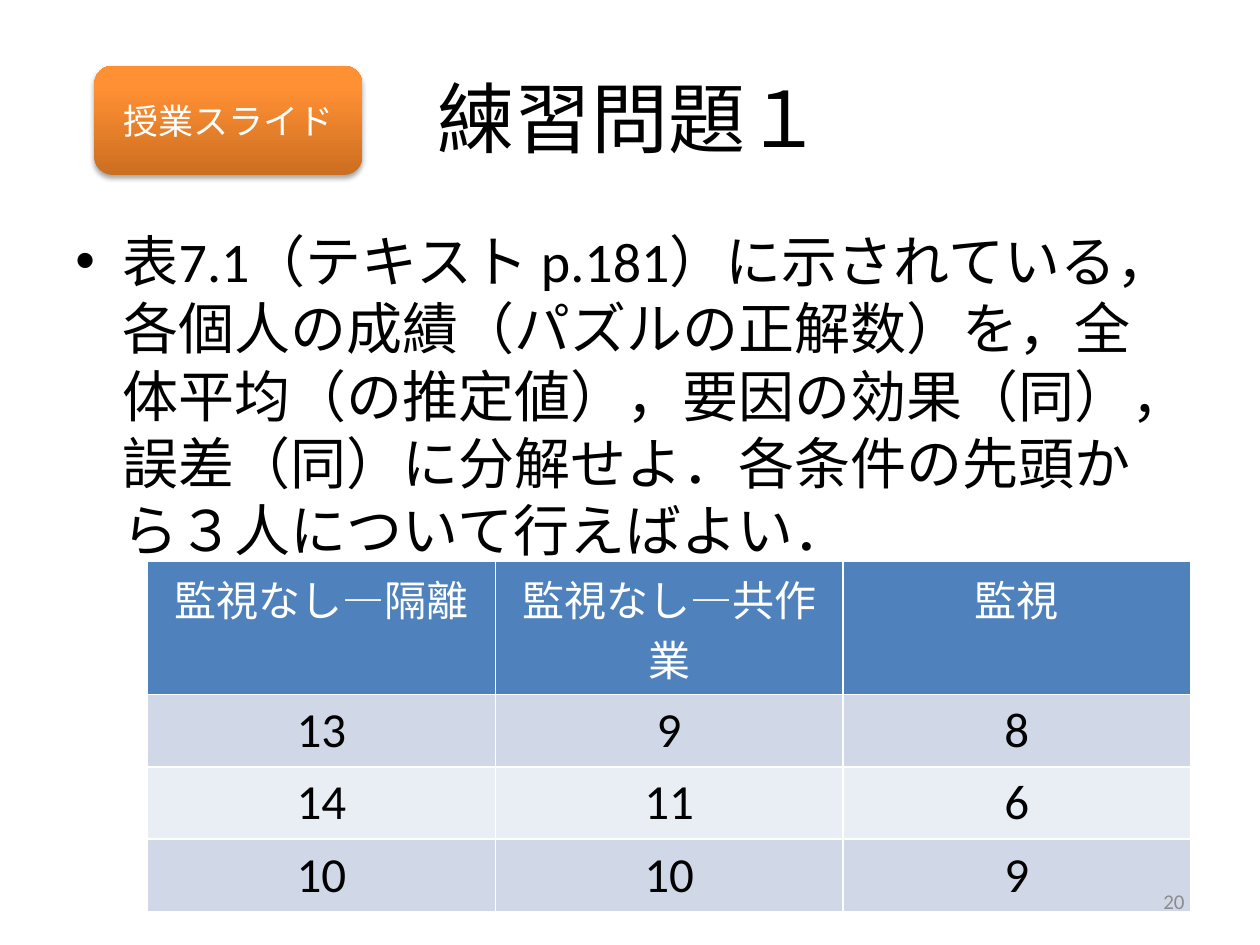
import pptx
import pptx.util
import pptx.dml.color
import pptx.enum.shapes
import pptx.enum.text
import pptx.oxml

Pt = pptx.util.Pt
RGB = pptx.dml.color.RGBColor
ALIGN = pptx.enum.text.PP_ALIGN
ANCHOR = pptx.enum.text.MSO_ANCHOR

BLACK = RGB(0x00, 0x00, 0x00)
WHITE = RGB(0xFF, 0xFF, 0xFF)
GRAY = RGB(0x8C, 0x8C, 0x8C)
HEADER = RGB(0x4F, 0x81, 0xBD)
BANDS = [RGB(0xD0, 0xD8, 0xE8), RGB(0xE9, 0xED, 0xF4)]
ORANGES = [(0, RGB(0xCC, 0x6E, 0x20)), (80, RGB(0xFF, 0x90, 0x34)), (100, RGB(0xFF, 0x91, 0x36))]
NS = 'xmlns:a="http://schemas.openxmlformats.org/drawingml/2006/main"'

TITLE = "練習問題１"
QUESTION = ("表7.1（テキスト p.181）に示されている，各個人の成績（パズルの正解数）を，"
            "全体平均（の推定値），要因の効果（同），誤差（同）に分解せよ．"
            "各条件の先頭から３人について行えばよい．")
BADGE = "授業スライド"
PAGE = "20"
SCORES = [
    ["監視なし―隔離", "監視なし―共作業", "監視"],
    ["13", "9", "8"],
    ["14", "11", "6"],
    ["10", "10", "9"],
]
HEADER_HEIGHT, ROW_HEIGHT = 76.2, 41.4


def write(tf, text, size, color, align):
    p = tf.paragraphs[0]
    p.alignment = align
    r = p.add_run()
    r.text = text
    r.font.color.rgb = color
    for name, value in {"name": "Calibri", "size": Pt(size), "bold": False}.items():
        setattr(r.font, name, value)
    return p


def add_text(s, box, anchor, *text):
    tf = s.shapes.add_textbox(*map(Pt, box)).text_frame
    tf.word_wrap = True
    tf.vertical_anchor = anchor
    return write(tf, *text)


def add_bullet(p, indent):
    pPr = p._p.get_or_add_pPr()
    pPr.set("marL", str(Pt(indent)))
    pPr.set("indent", str(-Pt(indent)))
    for xml in (f'<a:buFont {NS} typeface="Arial"/>', f'<a:buChar {NS} char="•"/>'):
        pPr.append(pptx.oxml.parse_xml(xml))


def add_badge(s, box):
    sp = s.shapes.add_shape(pptx.enum.shapes.MSO_SHAPE.ROUNDED_RECTANGLE, *map(Pt, box))
    sp.line.fill.background()
    stops = "".join(f'<a:gs pos="{pos * 1000}"><a:srgbClr val="{color}"/></a:gs>'
                    for pos, color in ORANGES)
    spPr = sp._element.spPr
    spPr.insert(2, pptx.oxml.parse_xml(
        f'<a:gradFill {NS} rotWithShape="1"><a:gsLst>{stops}</a:gsLst>'
        '<a:lin ang="16200000" scaled="0"/></a:gradFill>'))
    spPr.append(pptx.oxml.parse_xml(
        f'<a:effectLst {NS}><a:outerShdw blurRad="{Pt(3.1)}" dist="{Pt(1.8)}" dir="5400000" '
        'rotWithShape="0"><a:srgbClr val="000000"><a:alpha val="35000"/></a:srgbClr>'
        '</a:outerShdw></a:effectLst>'))
    sp.text_frame.vertical_anchor = ANCHOR.MIDDLE
    write(sp.text_frame, BADGE, 20, WHITE, ALIGN.CENTER)


def add_scores(s, left, top, width):
    height = HEADER_HEIGHT + ROW_HEIGHT * (len(SCORES) - 1)
    box = map(Pt, (left, top, width, height))
    table = s.shapes.add_table(len(SCORES), len(SCORES[0]), *box).table
    for i, row in enumerate(SCORES):
        table.rows[i].height = Pt(ROW_HEIGHT if i else HEADER_HEIGHT)
        fill, size, color = (BANDS[(i - 1) % 2], 28, BLACK) if i else (HEADER, 24, WHITE)
        for j, text in enumerate(row):
            cell = table.cell(i, j)
            cell.fill.solid()
            cell.fill.fore_color.rgb = fill
            write(cell.text_frame, text, size, color, ALIGN.CENTER)


def main():
    prs = pptx.Presentation()
    prs.slide_width, prs.slide_height = Pt(720), Pt(540)
    s = prs.slides.add_slide(prs.slide_layouts[5])

    title = s.shapes.title
    title.left, title.top, title.width, title.height = map(Pt, (36, 21.6, 648, 90))
    title.text_frame.vertical_anchor = ANCHOR.MIDDLE
    write(title.text_frame, TITLE, 44, BLACK, ALIGN.CENTER)

    p = add_text(s, (36, 126, 648, 356.4), ANCHOR.TOP, QUESTION, 32, BLACK, ALIGN.LEFT)
    p.space_before = Pt(6.4)
    add_bullet(p, 27)

    add_scores(s, 84.4, 320.6, 596)
    add_badge(s, (54, 37.6, 153, 62.4))
    add_text(s, (516, 500.5, 168, 28.75), ANCHOR.MIDDLE, PAGE, 12, GRAY, ALIGN.RIGHT)
    prs.save("out.pptx")


if __name__ == "__main__":
    main()
